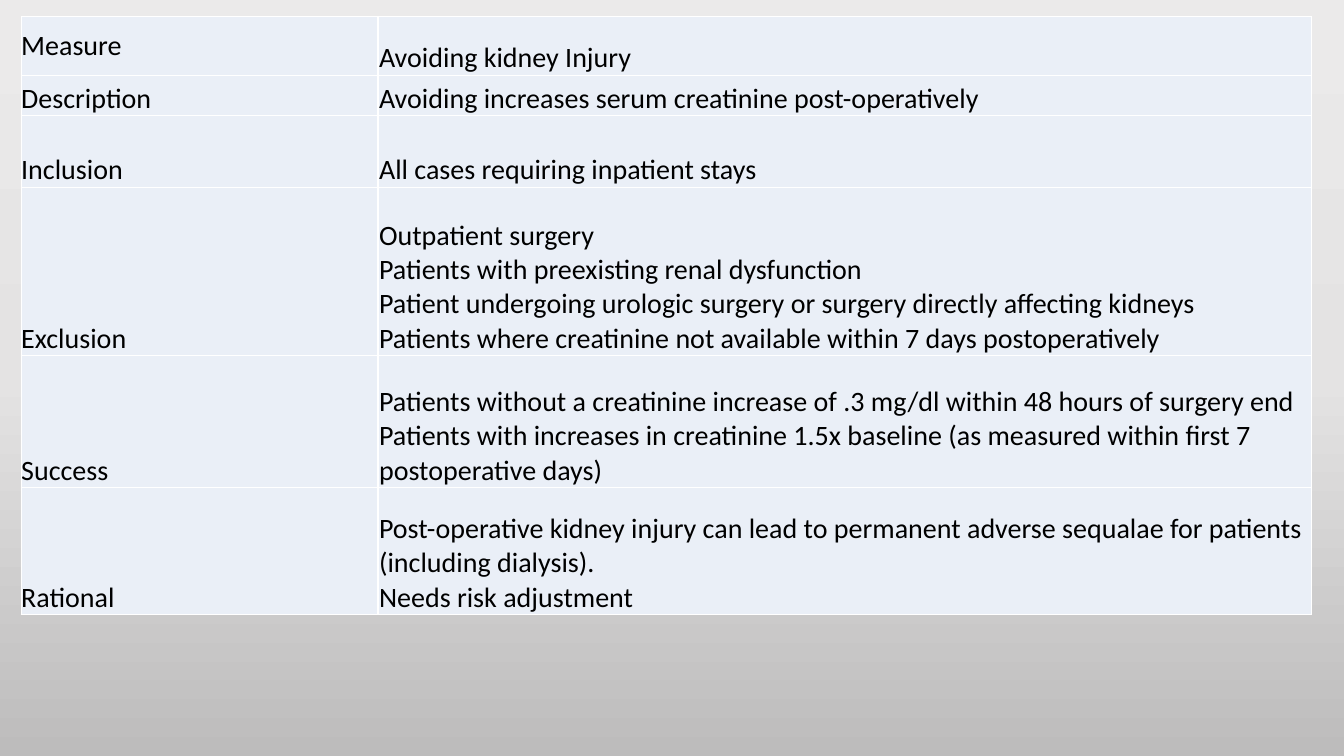
from copy import deepcopy

from lxml.etree import SubElement
from pptx import Presentation
from pptx.dml.color import RGBColor
from pptx.enum.text import MSO_ANCHOR
from pptx.oxml.ns import qn
from pptx.util import Inches, Pt

COLORS = {
    "text": "000000",
    "cell": "EAEFF7",
    "border": "FFFFFF",
    "sky": "EBEAEA",
    "middle": "E4E3E3",
    "ground": "BDBCBC",
}
COLUMN_WIDTHS = [3.54, 9.26]

# Row height, label, paragraphs of the detail; \v is a line break
MEASURE_ROWS = [
    (0.59, "Measure", ["Avoiding kidney Injury"]),
    (0.40, "Description", ["Avoiding increases serum creatinine post-operatively"]),
    (0.71, "Inclusion", ["All cases requiring inpatient stays"]),
    (1.67, "Exclusion", [
        "Outpatient surgery\v"
        "Patients with preexisting renal dysfunction\v"
        "Patient undergoing urologic surgery or surgery directly affecting kidneys\v"
        "Patients where creatinine not available within 7 days postoperatively"]),
    (1.31, "Success", [
        "Patients without a creatinine increase of .3 mg/dl within 48 hours of surgery end\v"
        "Patients with increases in creatinine 1.5x baseline "
        "(as measured within first 7 postoperative days)"]),
    (1.26, "Rational", [
        "Post-operative kidney injury can lead to permanent adverse sequalae "
        "for patients (including dialysis).",
        "Needs risk adjustment"]),
]


def write_cell(cell, paragraphs, anchor=MSO_ANCHOR.BOTTOM, inset=0, size=20, font="Calibri"):
    cell.vertical_anchor = anchor
    cell.margin_left = cell.margin_right = cell.margin_top = Inches(inset)
    cell.margin_bottom = 0
    frame = cell.text_frame
    for index, text in enumerate(paragraphs):
        paragraph = frame.add_paragraph() if index else frame.paragraphs[0]
        paragraph.text = text
        for run in paragraph.runs:
            run.font.size = Pt(size)
            run.font.name = font
            run.font.color.rgb = RGBColor.from_string(COLORS["text"])


def paint_cell(cell):
    """Draw the four borders, then the fill, in the order the schema needs."""
    properties = cell._tc.get_or_add_tcPr()
    for side in ("a:lnL", "a:lnR", "a:lnT", "a:lnB"):
        line = SubElement(properties, qn(side), w=str(Pt(1)))
        solid = SubElement(line, qn("a:solidFill"))
        SubElement(solid, qn("a:srgbClr"), val=COLORS["border"])
    cell.fill.solid()
    cell.fill.fore_color.rgb = RGBColor.from_string(COLORS["cell"])


prs = Presentation()
prs.slide_width = Inches(13.33)
prs.slide_height = Inches(7.5)
slide = prs.slides.add_slide(prs.slide_layouts[6])

backdrop = slide.background.fill
backdrop.gradient()
backdrop.gradient_angle = 270
stop_list = slide.background._cSld.find(".//" + qn("a:gsLst"))
stop_list.append(deepcopy(stop_list[-1]))
for stop, position, name in zip(backdrop.gradient_stops, (0, 0.5, 1), ("sky", "middle", "ground")):
    stop.position = position
    stop.color.rgb = RGBColor.from_string(COLORS[name])

measure_table = slide.shapes.add_table(
    len(MEASURE_ROWS), len(COLUMN_WIDTHS), Inches(0.21), Inches(0.16),
    Inches(sum(COLUMN_WIDTHS)), Inches(sum(row[0] for row in MEASURE_ROWS))).table
measure_table.first_row = False
measure_table.horz_banding = False
for column, width in zip(measure_table.columns, COLUMN_WIDTHS):
    column.width = Inches(width)

for index, (height, label, details) in enumerate(MEASURE_ROWS):
    measure_table.rows[index].height = Inches(height)
    label_cell, detail_cell = measure_table.rows[index].cells
    label_anchor = MSO_ANCHOR.BOTTOM if index else MSO_ANCHOR.MIDDLE
    write_cell(label_cell, [label], anchor=label_anchor)
    write_cell(detail_cell, details, inset=0.01)
    paint_cell(label_cell)
    paint_cell(detail_cell)

prs.save("out.pptx")
